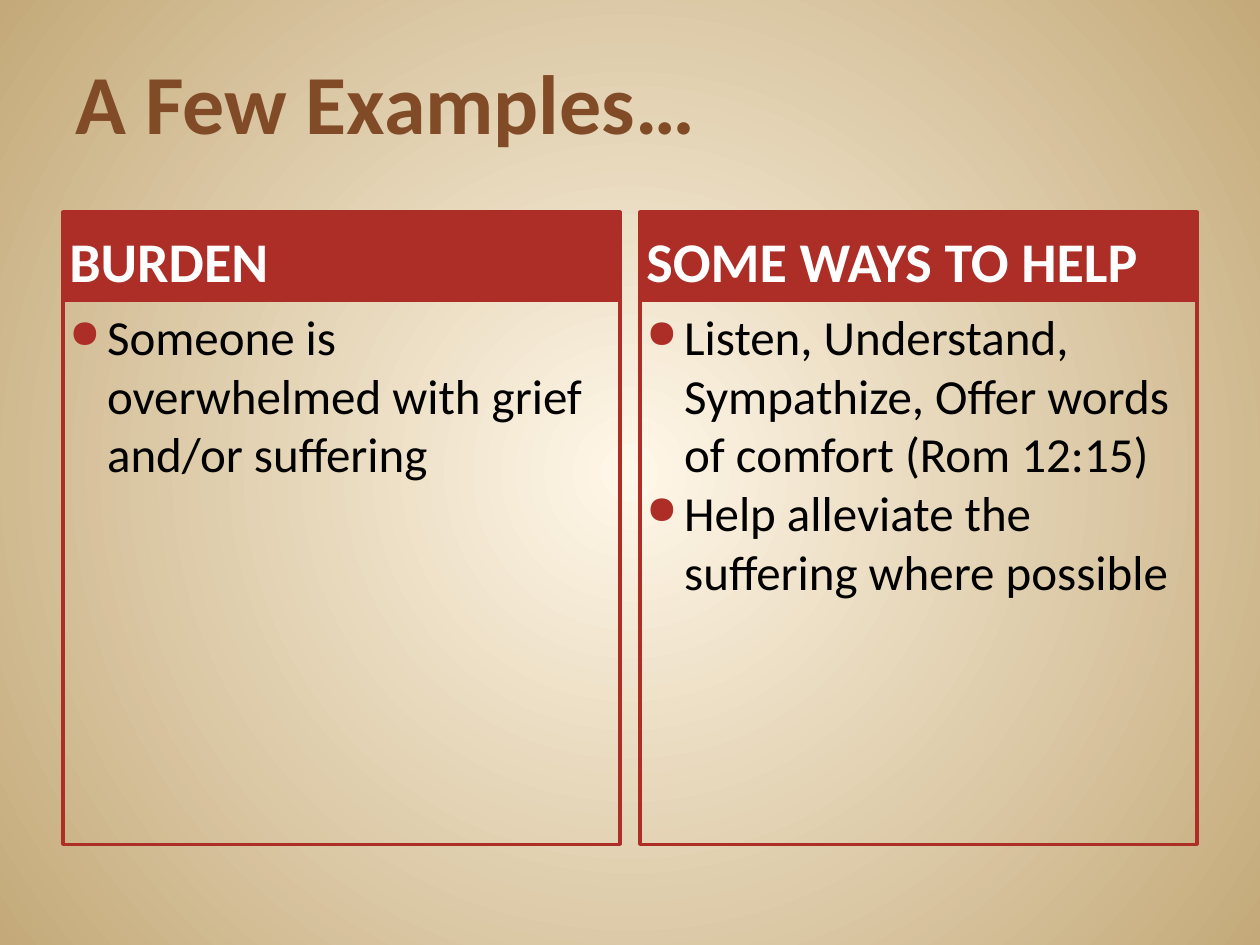
from dataclasses import dataclass

from lxml.etree import SubElement
from pptx import Presentation
from pptx.dml.color import RGBColor
from pptx.enum.shapes import MSO_SHAPE
from pptx.enum.text import MSO_ANCHOR, PP_ALIGN
from pptx.oxml.ns import qn
from pptx.util import Pt


@dataclass(frozen=True)
class Theme:
    font: str = "Calibri"
    brown: str = "804B26"
    red: str = "AD2E27"
    white: str = "FFFFFF"
    black: str = "000000"
    cream: str = "FFF7E8"
    tan: str = "C4AA7A"
    title: int = 48
    heading: int = 32
    body: int = 28


theme = Theme()


def add_run(p, text, size, color, bold=False):
    p.alignment = PP_ALIGN.LEFT
    r = p.add_run()
    r.text = text
    r.font.name = theme.font
    r.font.size = Pt(size)
    r.font.bold = bold
    r.font.color.rgb = RGBColor.from_string(color)


def add_bullet(p):
    pPr = p._p.get_or_add_pPr()
    pPr.set("marL", str(Pt(21.6)))
    pPr.set("indent", str(-Pt(21.6)))
    SubElement(SubElement(pPr, qn("a:buClr")), qn("a:srgbClr"), val=theme.red)
    SubElement(pPr, qn("a:buSzPct"), val="80000")
    SubElement(pPr, qn("a:buChar"), char="●")


prs = Presentation()
prs.slide_width, prs.slide_height = Pt(720), Pt(540)
s = prs.slides.add_slide(prs.slide_layouts[6])

# Background: radial gradient from the centre
fill = s.background.fill
fill.gradient()
for stop, color in zip(fill.gradient_stops, (theme.cream, theme.tan)):
    stop.color.rgb = RGBColor.from_string(color)
grad = s.element.find(".//" + qn("a:gradFill"))
grad.remove(grad.find(qn("a:lin")))
path = SubElement(grad, qn("a:path"), path="circle")
SubElement(path, qn("a:fillToRect"), l="50000", t="50000", r="50000", b="50000")

# Title
tf = s.shapes.add_textbox(Pt(36), Pt(24), Pt(648), Pt(66)).text_frame
tf.word_wrap = True
tf.vertical_anchor = MSO_ANCHOR.BOTTOM
add_run(tf.paragraphs[0], "A Few Examples…", theme.title, theme.brown, bold=True)

# Two columns, each a filled heading above an outlined list
columns = [
    ("BURDEN", ["Someone is overwhelmed with grief and/or suffering"]),
    ("SOME WAYS TO HELP", [
        "Listen, Understand, Sympathize, Offer words of comfort (Rom 12:15)",
        "Help alleviate the suffering where possible",
    ]),
]
margin, gap, top = 36, 11.5, 121
column_width = (720 - 2 * margin - gap) / 2
heading_height, list_height = 50.5, 311

for i, (heading, items) in enumerate(columns):
    left = margin + i * (column_width + gap)
    boxes = [(top, heading_height, [heading]), (top + heading_height, list_height, items)]
    for y, height, lines in boxes:
        is_heading = y == top
        sp = s.shapes.add_shape(MSO_SHAPE.RECTANGLE, Pt(left), Pt(y), Pt(column_width), Pt(height))
        sp.shadow.inherit = False
        sp.line.color.rgb = RGBColor.from_string(theme.red)
        sp.line.width = Pt(2)
        tf = sp.text_frame
        tf.word_wrap = True
        tf.margin_left = tf.margin_top = tf.margin_right = tf.margin_bottom = Pt(3.6)
        if is_heading:
            sp.fill.solid()
            sp.fill.fore_color.rgb = RGBColor.from_string(theme.red)
            tf.vertical_anchor = MSO_ANCHOR.BOTTOM
        else:
            sp.fill.background()
            tf.vertical_anchor = MSO_ANCHOR.TOP
        for n, line in enumerate(lines):
            p = tf.add_paragraph() if n else tf.paragraphs[0]
            if is_heading:
                add_run(p, line, theme.heading, theme.white, bold=True)
            else:
                add_bullet(p)
                add_run(p, line, theme.body, theme.black)

prs.save("out.pptx")
